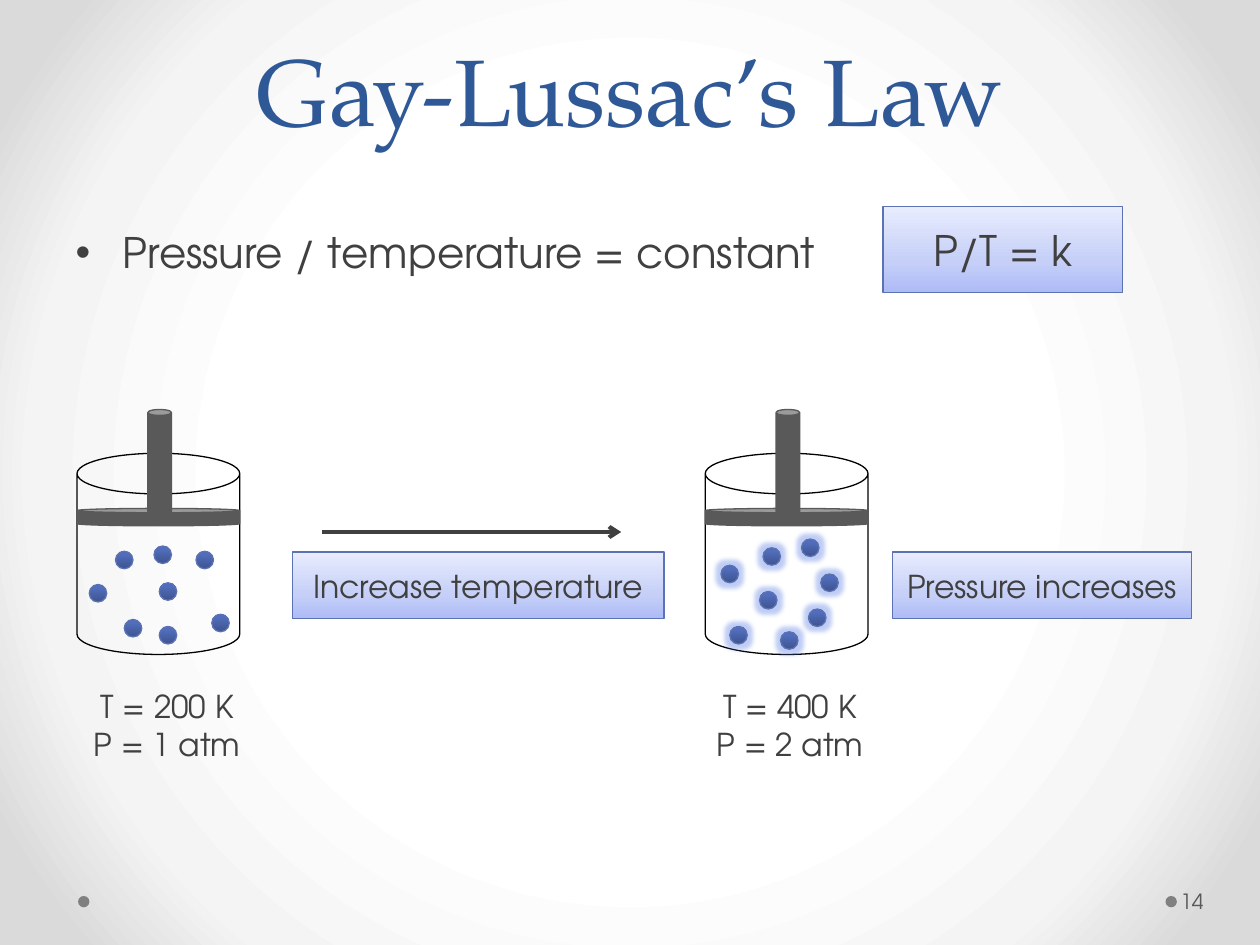
from lxml import etree
from pptx import Presentation
from pptx.dml.color import RGBColor
from pptx.enum import shapes, text
from pptx.oxml import ns
from pptx.util import Pt

BODY_FONT, TITLE_FONT = "TeX Gyre Adventor", "TeX Gyre Pagella"
INK, STEEL, BLUE = "404040", "595959", "5C72B2"
PANEL_STOPS = [(0, "ADBBF6"), (35, "C5CFF8"), (100, "E8ECFD")]
MOLECULE_STOPS = [(0, "3E5490"), (80, "516DBB"), (100, "4F6CBE")]
BACKDROP_STOPS = [(50, "FFFFFF"), (76, "F4F4F4"), (92, "DADADA")]
COLD_GAS = [(7, 75), (27, 95), (22, 56), (47, 99), (47, 74), (44, 53), (68, 56), (77, 92)]
HOT_GAS = [(9, 64), (33, 54), (66, 69), (31, 79), (59, 89), (55, 49), (14, 99), (43, 102)]


def color(code):
    return RGBColor.from_string(code)


def node(parent, tag, **attributes):
    return etree.SubElement(parent, ns.qn(tag), {k: str(v) for k, v in attributes.items()})


def set_gradient(properties, stops, radial=False):
    blank = properties.find(ns.qn("a:noFill"))
    gradient = etree.Element(ns.qn("a:gradFill"), rotWithShape="1")
    stop_list = node(gradient, "a:gsLst")
    for position, code in stops:
        node(node(stop_list, "a:gs", pos=position * 1000), "a:srgbClr", val=code)
    if radial:
        circle = node(gradient, "a:path", path="circle")
        node(circle, "a:fillToRect", l=50000, t=50000, r=50000, b=50000)
    else:
        node(gradient, "a:lin", ang=270 * 60000, scaled=0)
    properties.replace(blank, gradient)


def write(frame, *lines, size=18, font=BODY_FONT, ink=INK, align=text.PP_ALIGN.CENTER,
          anchor=None, spacing=None, wrap=True):
    frame.word_wrap = wrap
    if anchor is not None:
        frame.vertical_anchor = anchor
    for index, line in enumerate(lines):
        paragraph = frame.add_paragraph() if index else frame.paragraphs[0]
        paragraph.alignment = align
        if spacing:
            paragraph.line_spacing = Pt(spacing)
        run = paragraph.add_run()
        run.text = line
        run.font.size, run.font.name = Pt(size), font
        run.font.color.rgb = color(ink)


class LawSlide:
    """Hold the slide style and draw each kind of element in points."""

    def __init__(self, deck):
        self.slide = deck.slides.add_slide(deck.slide_layouts[1])
        self.canvas = self.slide.shapes
        self.slide.background.fill.background()
        set_gradient(self.slide.element.find(".//" + ns.qn("p:bgPr")), BACKDROP_STOPS, radial=True)

    def placeholder(self, index, box, line, **style):
        holder = self.slide.placeholders[index]
        holder.left, holder.top, holder.width, holder.height = map(Pt, box)
        write(holder.text_frame, line, **style)

    def start_group(self):
        self.canvas = self.slide.shapes.add_group_shape().shapes

    def end_group(self):
        self.canvas = self.slide.shapes

    def shape(self, kind, box, fill=None, stops=None, line=None):
        item = self.canvas.add_shape(kind, *map(Pt, box))
        item.shadow.inherit = False
        if fill:
            item.fill.solid()
            item.fill.fore_color.rgb = color(fill)
        else:
            item.fill.background()
        if stops:
            set_gradient(item.element.spPr, stops)
        if line:
            item.line.color.rgb = color(line)
            item.line.width = Pt(0.75)
        else:
            item.line.fill.background()
        return item

    def panel(self, box, label, size=18):
        item = self.shape(shapes.MSO_SHAPE.RECTANGLE, box, stops=PANEL_STOPS, line=BLUE)
        write(item.text_frame, label, size=size, anchor=text.MSO_ANCHOR.MIDDLE, wrap=False)

    def caption(self, box, *lines, **style):
        frame = self.canvas.add_textbox(*map(Pt, box)).text_frame
        write(frame, *lines, **style)
        return frame

    def molecule(self, x, y, glowing):
        item = self.shape(shapes.MSO_SHAPE.OVAL, (x, y, 10, 10), stops=MOLECULE_STOPS, line=BLUE)
        if glowing:
            effects = item.element.spPr.find(ns.qn("a:effectLst"))
            halo = node(node(effects, "a:glow", rad=Pt(5)), "a:srgbClr", val="5F82E8")
            node(halo, "a:alpha", val=40000)

    def piston(self, x, y, gas, glowing=False):
        can = shapes.MSO_SHAPE.CAN
        self.start_group()
        self.shape(can, (x, y, 93, 115), line="000000")
        self.shape(can, (x, y + 31.5, 93, 10), fill=STEEL, line=STEEL)
        self.shape(can, (x + 40.5, y - 25, 13.5, 60), fill=STEEL, line=STEEL)
        for dx, dy in gas:
            self.molecule(x + dx, y + dy, glowing)
        self.end_group()

    def arrow(self, x1, x2, y):
        item = self.canvas.add_connector(shapes.MSO_CONNECTOR.STRAIGHT, Pt(x1), Pt(y), Pt(x2), Pt(y))
        item.line.color.rgb = color(INK)
        item.line.width = Pt(2.25)
        node(item.line._get_or_add_ln(), "a:tailEnd", type="arrow")
        node(item.element.spPr, "a:effectLst")


def main():
    deck = Presentation()
    deck.slide_width, deck.slide_height = Pt(720), Pt(540)
    law = LawSlide(deck)
    for x in (666, 44.6):
        law.shape(shapes.MSO_SHAPE.OVAL, (x, 512, 6.5, 6.5), fill="808080")
    law.placeholder(0, (36, 0, 648, 87), "Gay-Lussac’s Law", size=54, font=TITLE_FONT,
                    ink="2F5897", anchor=text.MSO_ANCHOR.BOTTOM, spacing=58)
    law.placeholder(1, (36, 126, 648, 356), "Pressure / temperature = constant", size=24,
                    align=text.PP_ALIGN.LEFT)
    law.piston(403, 259, HOT_GAS, glowing=True)
    law.piston(44, 259, COLD_GAS)
    law.panel((167, 315.5, 212.5, 38), "Increase temperature")
    law.panel((510, 315.5, 171, 38), "Pressure increases")
    law.arrow(184, 355, 304)
    law.caption((41, 389, 109, 51), "T = 200 K", "P = 1 atm")
    law.caption((397, 389, 109, 51), "T = 400 K", "P = 2 atm")
    law.panel((504.5, 118, 137, 49), "P/T = k", size=24)
    number = law.caption((672.5, 500.5, 44, 29), "14", size=12, ink=STEEL,
                         align=text.PP_ALIGN.LEFT, anchor=text.MSO_ANCHOR.MIDDLE)
    number.margin_left, number.margin_right = Pt(2), Pt(3.6)
    deck.save("out.pptx")


if __name__ == "__main__":
    main()
